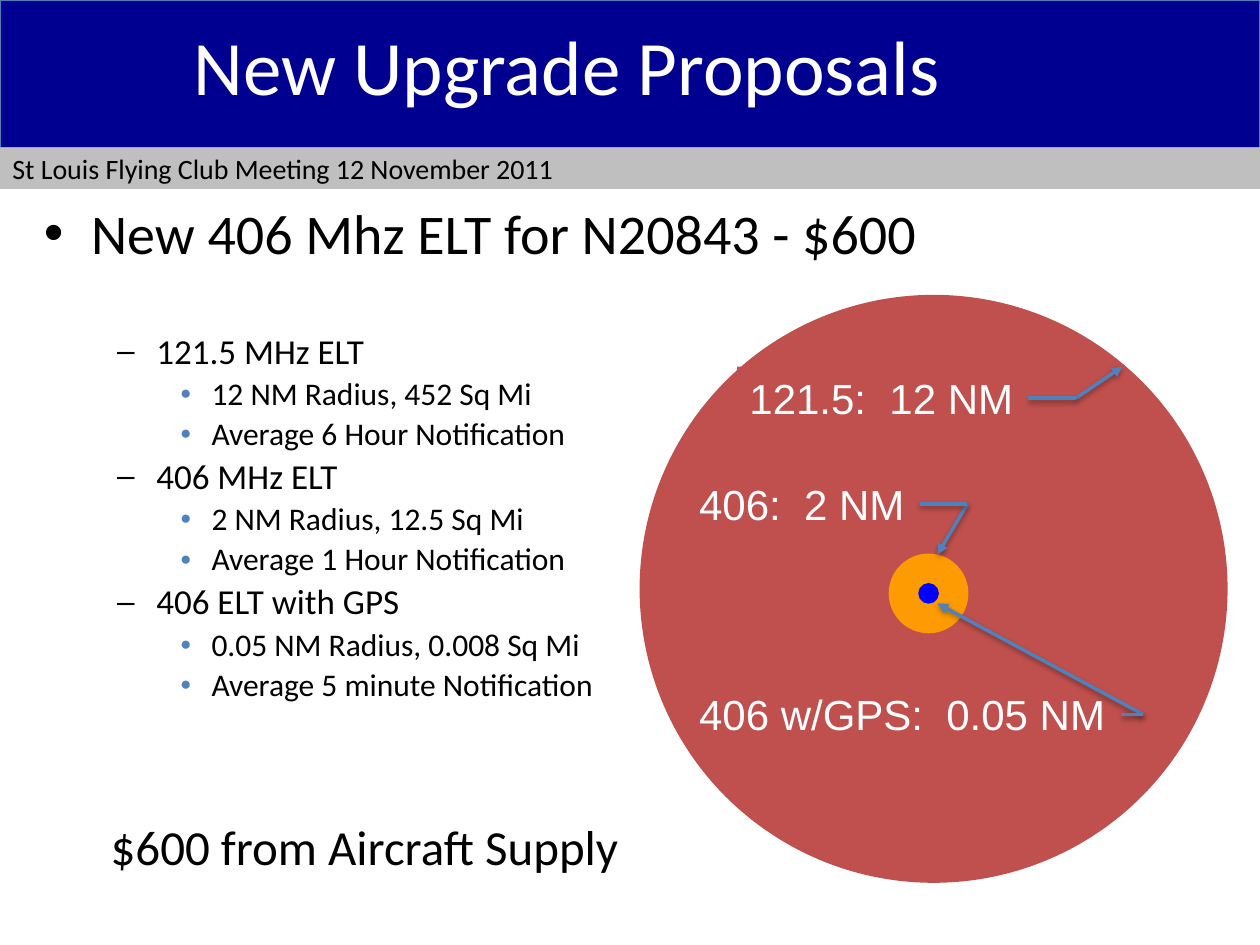
from dataclasses import dataclass

from lxml import etree
from pptx import Presentation
from pptx.dml.color import RGBColor
from pptx.enum import shapes, text
from pptx.oxml import ns
from pptx.util import Pt


@dataclass(frozen=True)
class Theme:
    navy: str = "000090"
    navy_edge: str = "4B7EBC"
    grey: str = "BFBFBF"
    black: str = "000000"
    white: str = "FFFFFF"
    red: str = "C0504D"
    orange: str = "FE9B03"
    blue: str = "0000FF"
    accent: str = "4F81BD"
    body_font: str = "Calibri"
    label_font: str = "Arial"
    title: int = 44
    headline: int = 32
    price: int = 28
    label: int = 24
    group: int = 20
    detail: int = 18
    meeting: int = 16


THEME = Theme()
ELT_TYPES = [
    ("121.5 MHz ELT", ["12 NM Radius, 452 Sq Mi", "Average 6 Hour Notification"]),
    ("406 MHz ELT", ["2 NM Radius, 12.5 Sq Mi", "Average 1 Hour Notification"]),
    ("406 ELT with GPS", ["0.05 NM Radius, 0.008 Sq Mi", "Average 5 minute Notification"]),
]
CALLOUTS = [
    ("406:  2 NM", (26.4, 101, 133.2), 27.2, (169.7, 147.8)),
    ("406 w/GPS:  0.05 NM", (26.4, 221.2, 248.4), 12.4, (169.7, 175.9)),
    ("121.5:  12 NM", (55.2, 40.5, 166.4), 27.2, (275.5, 40.5)),
]


def colour(value):
    return RGBColor.from_string(value)


def add_element(parent, tag, **attributes):
    return etree.SubElement(parent, ns.qn(tag), attributes)


def add_filled(page, kind, box, fill, edge=None, width=1):
    shape = page.shapes.add_shape(kind, *map(Pt, box))
    shape.shadow.inherit = False
    shape.fill.solid()
    shape.fill.fore_color.rgb = colour(fill)
    if edge:
        shape.line.color.rgb = colour(edge)
        shape.line.width = Pt(width)
    else:
        shape.line.fill.background()
    return shape


def add_textbox(page, box, wrap=True):
    frame = page.shapes.add_textbox(*map(Pt, box)).text_frame
    frame.word_wrap = wrap
    return frame


def write(para, words, size, shade=THEME.black, font=THEME.body_font):
    span = para.add_run()
    span.text = words
    span.font.size = Pt(size)
    span.font.name = font
    span.font.color.rgb = colour(shade)


def set_bullet(para, symbol, margin, hang, shade, percent):
    properties = para._p.get_or_add_pPr()
    properties.set("marL", str(Pt(margin)))
    properties.set("indent", str(-Pt(hang)))
    add_element(add_element(properties, "a:buClr"), "a:srgbClr", val=shade)
    add_element(properties, "a:buSzPct", val=str(percent * 1000))
    add_element(properties, "a:buFont", typeface=THEME.label_font)
    add_element(properties, "a:buChar", char=symbol)


def add_header(page, box):
    left, top, width, height = box
    bar = 84.24
    add_filled(page, shapes.MSO_SHAPE.RECTANGLE, (left, top, width, bar),
               THEME.navy, THEME.navy_edge, 0.75)
    strip = add_filled(page, shapes.MSO_SHAPE.RECTANGLE,
                       (left, top + bar, width, height - bar), THEME.grey)
    strip.text_frame.vertical_anchor = text.MSO_ANCHOR.MIDDLE
    para = strip.text_frame.paragraphs[0]
    para.alignment = text.PP_ALIGN.LEFT
    write(para, "St Louis Flying Club Meeting 12 November 2011", THEME.meeting)

    title = add_textbox(page, (left, top + 5.76, width * 0.9, 62.64))
    title.vertical_anchor = text.MSO_ANCHOR.MIDDLE
    para = title.paragraphs[0]
    para.alignment = text.PP_ALIGN.CENTER
    write(para, "New Upgrade Proposals", THEME.title, THEME.white)


def add_headline(page, box):
    para = add_textbox(page, box).paragraphs[0]
    set_bullet(para, "•", 27, 27, THEME.black, 100)
    write(para, "New 406 Mhz ELT for N20843 - $600", THEME.headline)


def add_comparison(page, box):
    frame = add_textbox(page, box)
    rows = []
    for group, details in ELT_TYPES:
        rows.append((group, 1, THEME.group, ("–", 58.5, 22.5, THEME.black, 90)))
        rows += [(detail, 2, THEME.detail, ("●", 90, 18, THEME.accent, 60))
                 for detail in details]
    for index, (words, level, size, bullet) in enumerate(rows):
        para = frame.add_paragraph() if index else frame.paragraphs[0]
        para.level = level
        para.line_spacing = 0.9
        para.space_before = Pt(size * 0.2 if index else 0)
        set_bullet(para, *bullet)
        write(para, words, size)


def add_leader(page, start, end, source=None, arrow=False):
    line = page.shapes.add_connector(shapes.MSO_CONNECTOR.STRAIGHT, *map(Pt, start + end))
    if source is not None:
        line.begin_connect(source, 3)
    line.line.color.rgb = colour(THEME.accent)
    line.line.width = Pt(2)
    if arrow:
        add_element(line.line._get_or_add_ln(), "a:tailEnd", type="triangle")
    effects = add_element(line._element.spPr, "a:effectLst")
    shadow = add_element(effects, "a:outerShdw", blurRad=str(Pt(3.1)), dist=str(Pt(1.6)),
                         dir="5400000", rotWithShape="0")
    add_element(add_element(shadow, "a:srgbClr", val=THEME.black), "a:alpha", val="38000")


def add_callout(page, box, words, elbow_gap, tip):
    label = add_filled(page, shapes.MSO_SHAPE.RECTANGLE, box, THEME.red)
    frame = label.text_frame
    frame.word_wrap = False
    frame.auto_size = text.MSO_AUTO_SIZE.SHAPE_TO_FIT_TEXT
    frame.vertical_anchor = text.MSO_ANCHOR.TOP
    para = frame.paragraphs[0]
    para.alignment = text.PP_ALIGN.LEFT
    write(para, words, THEME.label, THEME.white, THEME.label_font)

    left, top, width, height = box
    side = (left + width, top + height / 2)
    elbow = (side[0] + elbow_gap, side[1])
    add_leader(page, elbow, tip, arrow=True)
    add_leader(page, side, elbow, source=label)


def add_radius_diagram(page, box):
    left, top, width, height = box
    circles = [
        (0, 0, width, THEME.red),
        (142.3, 147.8, 44.6, THEME.orange),
        (159.2, 164.7, 10.8, THEME.blue),
    ]
    for x, y, size, shade in circles:
        add_filled(page, shapes.MSO_SHAPE.OVAL, (left + x, top + y, size, size), shade, shade)
    for words, (x, y, label_width), elbow_gap, tip in CALLOUTS:
        add_callout(page, (left + x, top + y, label_width, 36), words, elbow_gap,
                    (left + tip[0], top + tip[1]))


def add_price(page, box):
    frame = add_textbox(page, box, wrap=False)
    frame.auto_size = text.MSO_AUTO_SIZE.SHAPE_TO_FIT_TEXT
    write(frame.paragraphs[0], "$600 from Aircraft Supply", THEME.price)


def main():
    deck = Presentation()
    deck.slide_width, deck.slide_height = Pt(720), Pt(540)
    page = deck.slides.add_slide(deck.slide_layouts[6])
    add_header(page, (0, 0, 720, 108))
    add_headline(page, (18, 110, 648, 356.4))
    add_comparison(page, (23.8, 187.2, 444.2, 349.2))
    add_radius_diagram(page, (366, 169, 335, 335))
    add_price(page, (56.2, 463, 309.6, 41))
    deck.save("out.pptx")


if __name__ == "__main__":
    main()
